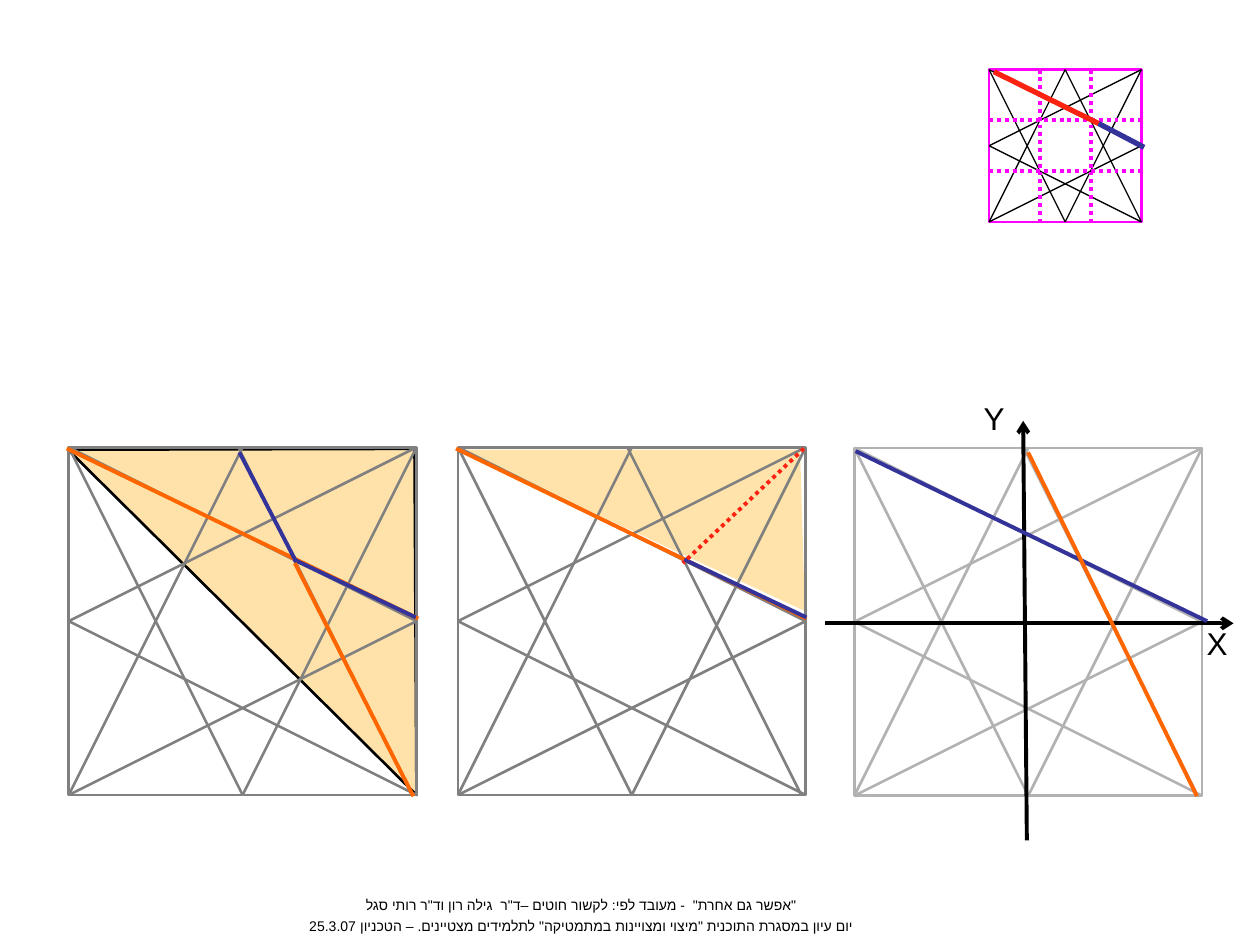
import lxml.etree
import pptx
import pptx.dml.color
import pptx.enum.dml
import pptx.enum.shapes
import pptx.enum.text
import pptx.oxml.ns
import pptx.util

Pt = pptx.util.Pt
qn = pptx.oxml.ns.qn
DOTTED = pptx.enum.dml.MSO_LINE.ROUND_DOT
ALIGN = pptx.enum.text.PP_ALIGN

COLORS = {
    "black": "000000",
    "magenta": "FF00FF",
    "red": "FA2312",
    "blue": "333399",
    "orange": "FF6600",
    "sand": "FFCC66",
    "gray": "808080",
    "silver": "B2B2B2",
}

# Star lines as fractions of the square's side
STAR = [
    ((0, 0), (1, .5)), ((0, .5), (1, 0)),
    ((0, 1), (1, .5)), ((0, .5), (1, 1)),
    ((.5, 1), (1, 0)), ((0, 0), (.5, 1)),
    ((.5, 0), (0, 1)), ((.5, 0), (1, 1)),
]


def rgb(name):
    return pptx.dml.color.RGBColor.from_string(COLORS[name])


def add_line(shapes, start, end, color, width, dash=None, arrow=False):
    s = shapes.add_connector(pptx.enum.shapes.MSO_CONNECTOR.STRAIGHT,
                             Pt(start[0]), Pt(start[1]), Pt(end[0]), Pt(end[1]))
    s.line.color.rgb = rgb(color)
    s.line.width = Pt(width)
    if dash:
        s.line.dash_style = dash
    if arrow:
        ln = s.line._get_or_add_ln()
        lxml.etree.SubElement(ln, qn("a:tailEnd"), type="arrow")
    lxml.etree.SubElement(s._element.spPr, qn("a:effectLst"))


def add_star(shapes, left, top, side, square_color, line_color, width, shift=0):
    """Square with its eight-line star; shift moves the last line sideways."""
    group = shapes.add_group_shape().shapes
    sp = group.add_shape(pptx.enum.shapes.MSO_SHAPE.RECTANGLE,
                         Pt(left), Pt(top), Pt(side), Pt(side))
    sp.shadow.inherit = False
    sp.fill.background()
    sp.line.color.rgb = rgb(square_color)
    sp.line.width = Pt(1.5)
    for i, ends in enumerate(STAR):
        dx = shift if i == len(STAR) - 1 else 0
        start, end = [(left + x * side + dx, top + y * side) for x, y in ends]
        add_line(group, start, end, line_color, width)
    return group


def add_triangle(shapes, points, alpha, outline=None):
    builder = shapes.build_freeform(Pt(points[0][0]), Pt(points[0][1]), scale=1.0)
    builder.add_line_segments([(Pt(x), Pt(y)) for x, y in points[1:]], close=True)
    sp = builder.convert_to_shape()
    sp.shadow.inherit = False
    sp.fill.solid()
    sp.fill.fore_color.rgb = rgb("sand")
    clr = sp._element.spPr.find(qn("a:solidFill")).find(qn("a:srgbClr"))
    lxml.etree.SubElement(clr, qn("a:alpha"), val=str(alpha * 1000))
    if outline:
        sp.line.color.rgb = rgb(outline)
        sp.line.width = Pt(1.5)
    else:
        sp.line.fill.background()


def add_text(shapes, box, paragraphs, size, align):
    tf = shapes.add_textbox(*[Pt(v) for v in box]).text_frame
    tf.word_wrap = True
    tf.auto_size = pptx.enum.text.MSO_AUTO_SIZE.SHAPE_TO_FIT_TEXT
    for i, text in enumerate(paragraphs):
        p = tf.paragraphs[0] if i == 0 else tf.add_paragraph()
        p.alignment = align
        p._p.get_or_add_pPr().set("rtl", "1")
        if i:
            p.space_before = Pt(size * 0.3)
        r = p.add_run()
        r.text = text
        r.font.size = Pt(size)
        r.font.name = "Arial"
        r.font.color.rgb = rgb("black")
        lxml.etree.SubElement(r._r.get_or_add_rPr(), qn("a:cs"), typeface="Arial")


def main():
    prs = pptx.Presentation()
    prs.slide_width, prs.slide_height = Pt(720), Pt(540)
    shapes = prs.slides.add_slide(prs.slide_layouts[6]).shapes

    # Small star with a grid of thirds
    left, top, side = 565.2, 39.8, 87
    small = add_star(shapes, left, top, side, "magenta", "black", 0.75)
    for third in (side / 3, side * 2 / 3):
        add_line(small, (left, top + third), (left + side, top + third),
                 "magenta", 2.25, DOTTED)
        add_line(small, (left + third, top), (left + third, top + side),
                 "magenta", 2.25, DOTTED)
    add_line(shapes, (568, 41), (627.8, 70.6), "red", 3)
    add_line(shapes, (627.8, 70.6), (653.8, 84.2), "blue", 3)

    # Left star: half-square triangle
    side = 198.7
    add_triangle(shapes, [(38.9, 257), (236.9, 256.5), (238, 454.3)], 56, "black")
    add_star(shapes, 39.3, 255.6, side, "gray", "gray", 1.5, -2.5)
    add_line(shapes, (38.2, 256.3), (239, 353.5), "orange", 2.25)
    add_line(shapes, (167.8, 319.7), (237.6, 352.8), "blue", 2.25)
    add_line(shapes, (136.8, 258.5), (169.5, 321.5), "blue", 2.25)
    add_line(shapes, (168.5, 321.8), (236.2, 455), "orange", 2.25)

    # Middle star: upper triangle
    add_triangle(shapes, [(261.4, 257), (457.2, 257), (460, 349.2)], 55)
    add_star(shapes, 261.7, 255.6, side, "gray", "gray", 1.5, -2.5)
    add_line(shapes, (260.6, 256.3), (460.8, 353.5), "orange", 2.25)
    add_line(shapes, (391, 319.7), (460.8, 352.8), "blue", 2.25)
    add_line(shapes, (459.4, 256.3), (390.2, 321.8), "red", 2.25, DOTTED)

    # Right star: coordinate axes
    add_star(shapes, 488.2, 256, side, "silver", "silver", 1.5, -2.5)
    add_line(shapes, (586.8, 480.2), (584.7, 240.5), "black", 2.25, arrow=True)
    add_line(shapes, (471.6, 356.2), (704.9, 356.2), "black", 2.25, arrow=True)
    add_line(shapes, (488.9, 257.8), (689.8, 355), "blue", 2.25)
    add_line(shapes, (587.5, 258.5), (684, 455), "orange", 2.25)
    add_text(shapes, (682.6, 352.8, 26, 28.8), ["X"], 18, ALIGN.RIGHT)
    add_text(shapes, (555.1, 224.6, 26, 28.8), ["Y"], 18, ALIGN.RIGHT)

    # Source note
    add_text(shapes, (67.7, 509, 529.2, 29.5), [
        "\"אפשר גם אחרת\"  - מעובד לפי: לקשור חוטים –ד\"ר  גילה רון וד\"ר רותי סגל",
        "יום עיון במסגרת התוכנית \"מיצוי ומצויינות במתמטיקה\" לתלמידים מצטיינים. – הטכניון 25.3.07",
    ], 8, ALIGN.CENTER)

    prs.save("out.pptx")


if __name__ == "__main__":
    main()
